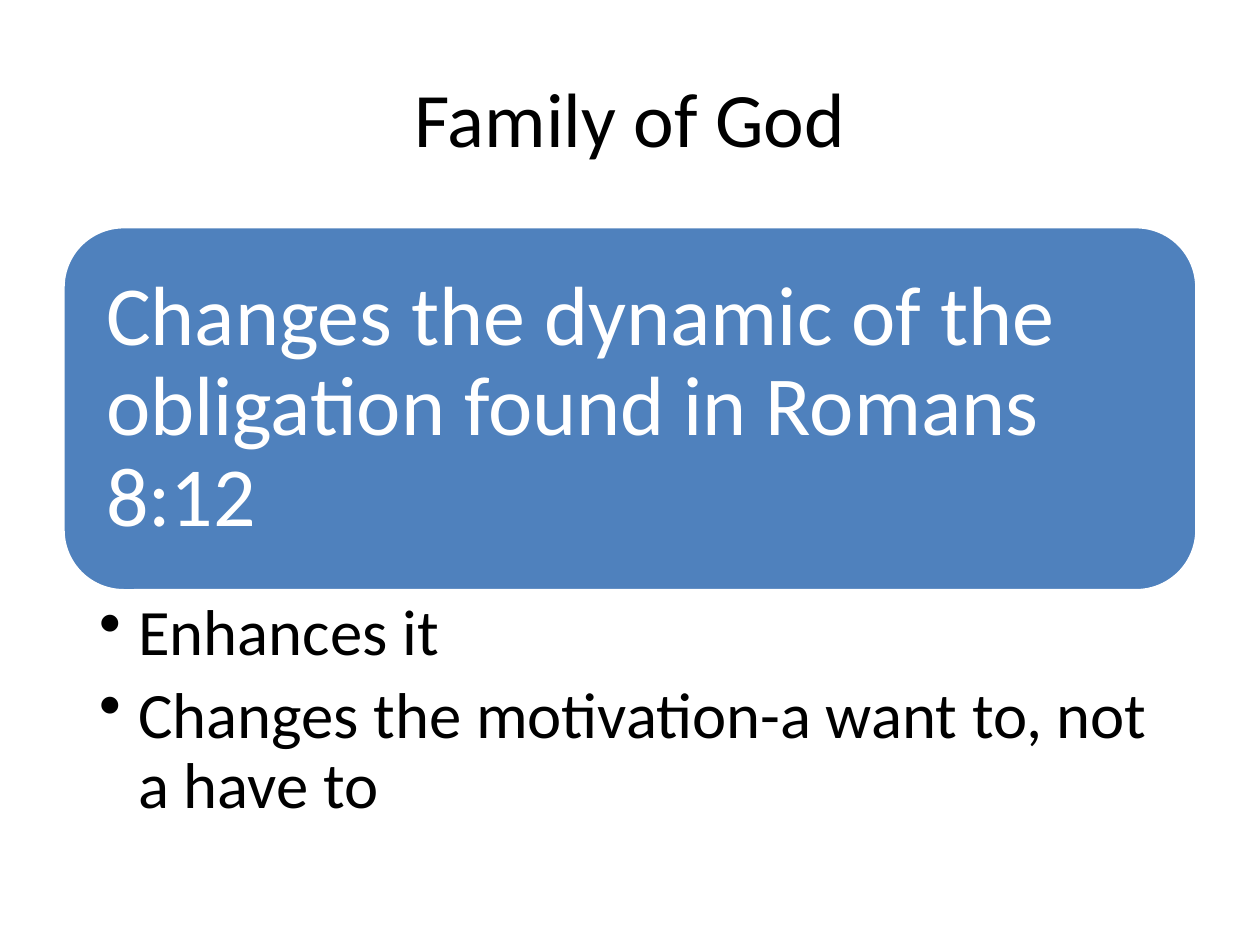
from lxml.etree import SubElement
from pptx import Presentation
from pptx.dml.color import RGBColor
from pptx.enum.shapes import MSO_SHAPE
from pptx.enum.text import MSO_ANCHOR, PP_ALIGN
from pptx.oxml.ns import qn
from pptx.util import Cm, Pt

# Content
TITLE = "Family of God"
HEADLINE = "Changes the dynamic of the obligation found in Romans 8:12"
POINTS = [
    "Enhances it",
    "Changes the motivation-a want to, not a have to",
]

# Style
FONT = "Calibri"
BLACK = RGBColor(0x00, 0x00, 0x00)
WHITE = RGBColor(0xFF, 0xFF, 0xFF)
BLUE = RGBColor(0x4F, 0x81, 0xBD)

# Layout: one column, the points start where the panel ends
LEFT, WIDTH = Cm(1.27), Cm(22.86)
TITLE_TOP, TITLE_HEIGHT = Cm(0.76), Cm(3.18)
PANEL_TOP, PANEL_HEIGHT = Cm(4.57), Cm(7.34)
POINTS_HEIGHT = Cm(4.98)
BULLET_INDENT = Cm(0.79)


def set_frame(frame, anchor, left, top, right, bottom):
    frame.word_wrap = True
    frame.vertical_anchor = anchor
    frame.margin_left, frame.margin_top = Cm(left), Cm(top)
    frame.margin_right, frame.margin_bottom = Cm(right), Cm(bottom)


def write(paragraph, text, size, color, align=PP_ALIGN.LEFT, spacing=1.0):
    paragraph.text = text
    paragraph.alignment = align
    paragraph.line_spacing = spacing
    font = paragraph.font
    font.name, font.size, font.color.rgb = FONT, Pt(size), color


def add_bullet(paragraph):
    properties = paragraph._p.get_or_add_pPr()
    properties.set("marL", str(BULLET_INDENT))
    properties.set("indent", str(-BULLET_INDENT))
    bullet = SubElement(properties, qn("a:buChar"))
    bullet.set("char", "•")
    # The schema places the bullet before the default run properties
    properties.find(qn("a:defRPr")).addprevious(bullet)


presentation = Presentation()
presentation.slide_width, presentation.slide_height = Cm(25.4), Cm(19.05)
slide = presentation.slides.add_slide(presentation.slide_layouts[5])

# Title
title = slide.shapes.title
title.left, title.top = LEFT, TITLE_TOP
title.width, title.height = WIDTH, TITLE_HEIGHT
set_frame(title.text_frame, MSO_ANCHOR.MIDDLE, 0.25, 0.13, 0.25, 0.13)
write(title.text_frame.paragraphs[0], TITLE, 44, BLACK, PP_ALIGN.CENTER)

# Headline panel
panel = slide.shapes.add_shape(
    MSO_SHAPE.ROUNDED_RECTANGLE, LEFT, PANEL_TOP, WIDTH, PANEL_HEIGHT)
panel.shadow.inherit = False
panel.fill.solid()
panel.fill.fore_color.rgb = BLUE
panel.line.color.rgb = WHITE
panel.line.width = Pt(2)
set_frame(panel.text_frame, MSO_ANCHOR.MIDDLE, 0.51, 0.51, 0.51, 0.51)
write(panel.text_frame.paragraphs[0], HEADLINE, 48, WHITE, spacing=0.9)

# Bulleted points
points = slide.shapes.add_textbox(
    LEFT, PANEL_TOP + PANEL_HEIGHT, WIDTH, POINTS_HEIGHT)
frame = points.text_frame
set_frame(frame, MSO_ANCHOR.TOP, 0.73, 0.18, 0.94, 0.18)
for index, point in enumerate(POINTS):
    paragraph = frame.add_paragraph() if index else frame.paragraphs[0]
    write(paragraph, point, 37, BLACK, spacing=0.9)
    paragraph.space_after = Pt(7.4)
    add_bullet(paragraph)

presentation.save("out.pptx")
